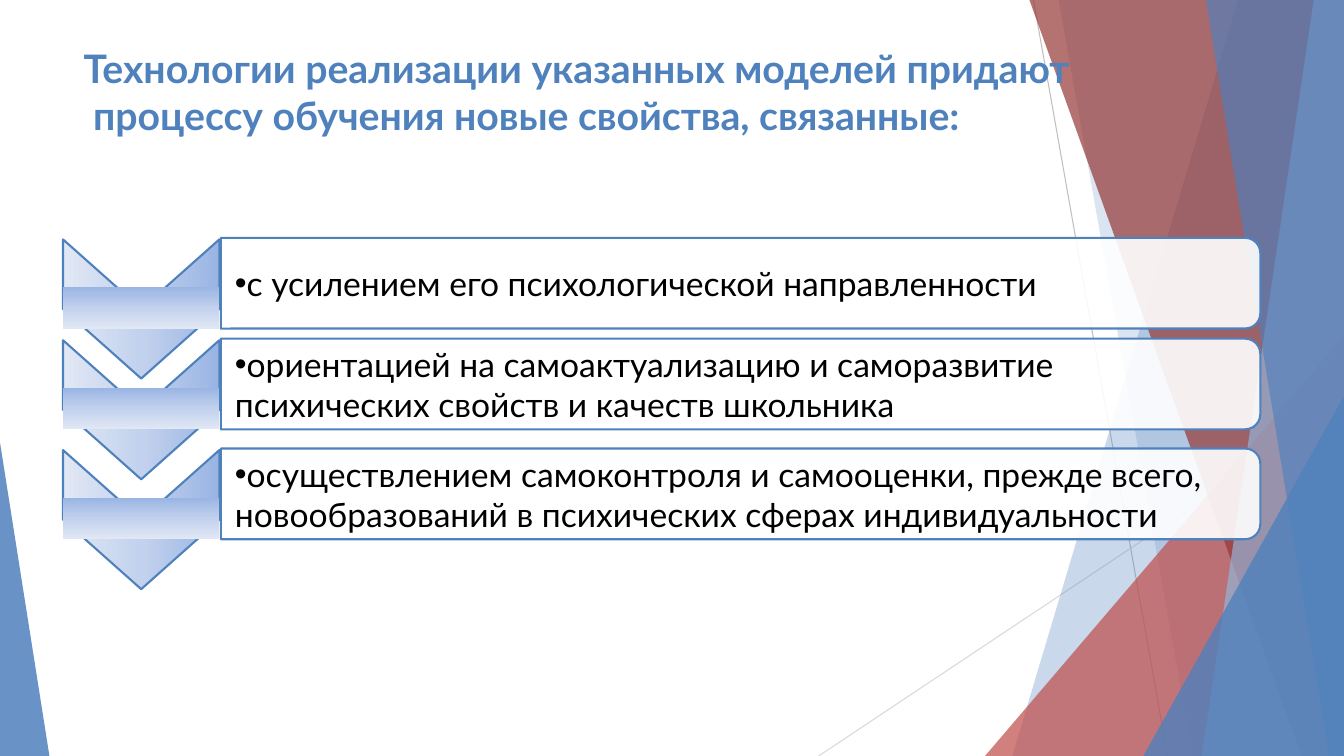
"""Build a slide with a title and three chevron rows over a faceted backdrop."""
import copy

import pptx
import pptx.dml.color
import pptx.enum.shapes
import pptx.enum.text
import pptx.oxml
import pptx.oxml.ns
import pptx.util

COLORS = {
    "blue": "4F81BD", "pale_blue": "95B3D7", "red": "C0504D", "dark_red": "953735",
    "white": "FFFFFF", "black": "000000", "gray": "BFBFBF", "light_gray": "D9D9D9",
    "chevron_dark": "9AB5E4", "chevron_mid": "C2D1ED", "chevron_light": "E1E8F5",
}
GRADIENT = {0: "chevron_dark", 0.5: "chevron_mid", 1: "chevron_light"}
COLUMNS, ROWS = 133.3, 75
CELL = pptx.util.Inches(0.1)
KIND = pptx.enum.shapes.MSO_SHAPE
ANCHOR = pptx.enum.text.MSO_ANCHOR

TITLE = "Технологии реализации указанных моделей придают\n процессу обучения новые свойства, связанные:"
PROPERTIES = {
    23.6: "с усилением его психологической направленности",
    33.6: "ориентацией на самоактуализацию и саморазвитие психических свойств и качеств школьника",
    44.5: "осуществлением самоконтроля и самооценки, прежде всего, "
          "новообразований в психических сферах индивидуальности",
}


def cells(count):
    return round(count * CELL)


def color(name):
    return pptx.dml.color.RGBColor.from_string(COLORS[name])


def tag(name):
    return pptx.oxml.ns.qn(name)


def write_text(box, text, size=24, shade="black", bold=False, anchor=ANCHOR.MIDDLE,
               insets=(1, 0.5, 1, 0.5), bullet=None, level=0):
    frame = box.text_frame
    frame.word_wrap = True
    frame.auto_size = pptx.enum.text.MSO_AUTO_SIZE.NONE
    frame.vertical_anchor = anchor
    frame.margin_left, frame.margin_top, frame.margin_right, frame.margin_bottom = map(cells, insets)
    para = frame.paragraphs[0]
    para.text = text
    para.level = level
    para.alignment = pptx.enum.text.PP_ALIGN.LEFT
    para.space_before = pptx.util.Pt(0)
    for span in para.runs:
        span.font.name = "Lato"
        span.font.size = pptx.util.Pt(size)
        span.font.bold = bold
        span.font.color.rgb = color(shade)
    for line_break in box.element.iter(tag("a:br")):
        line_break.append(copy.deepcopy(line_break.getprevious().find(tag("a:rPr"))))
    if bullet:
        settings = next(box.element.iter(tag("a:pPr")))
        settings.set("marL", "0")
        settings.set("indent", "0")
        mark = pptx.oxml.parse_xml(f'<a:buChar {pptx.oxml.ns.nsdecls("a")} char="{bullet}"/>')
        settings.append(mark)


class Painter:
    def __init__(self, page):
        self.page = page

    def dress(self, shape, fill, opacity=100, outline=None):
        shape.shadow.inherit = False
        shape.fill.solid()
        shape.fill.fore_color.rgb = color(fill)
        if opacity < 100:
            shade = shape.element.spPr.find(tag("a:solidFill"))[0]
            shade.append(pptx.oxml.parse_xml(
                f'<a:alpha {pptx.oxml.ns.nsdecls("a")} val="{opacity * 1000}"/>'))
        self.outline(shape, outline)

    def outline(self, shape, name):
        if name:
            shape.line.color.rgb = color(name)
            shape.line.width = pptx.util.Pt(1.5)
        else:
            shape.line.fill.background()

    def shape(self, kind, area, fill, opacity=100, outline=None, peak=None):
        shape = self.page.shapes.add_shape(kind, *map(cells, area))
        if peak is not None:
            shape.adjustments[0] = peak
        self.dress(shape, fill, opacity, outline)
        return shape

    def gradient(self, shape):
        shape.fill.gradient()
        shape.fill.gradient_angle = 270
        stops = next(shape.element.iter(tag("a:gsLst")))
        stops.insert(1, copy.deepcopy(stops[1]))
        for stop, (position, name) in zip(shape.fill.gradient_stops, GRADIENT.items()):
            stop.position = position
            stop.color.rgb = color(name)

    def facet(self, top, bottom, fill, opacity):
        outline = self.page.shapes.build_freeform(cells(top), 0)
        corners = [(COLUMNS, 0), (COLUMNS, ROWS), (bottom, ROWS)]
        outline.add_line_segments([(cells(x), cells(y)) for x, y in corners])
        self.dress(outline.convert_to_shape(), fill, opacity)

    def line(self, start, end, name):
        straight = pptx.enum.shapes.MSO_CONNECTOR.STRAIGHT
        line = self.page.shapes.add_connector(straight, *map(cells, start + end))
        line.line.color.rgb = color(name)
        line.line.width = pptx.util.Pt(0.75)
        line.element.spPr.append(
            pptx.oxml.parse_xml(f'<a:effectLst {pptx.oxml.ns.nsdecls("a")}/>'))

    def place(self, box, area):
        box.left, box.top, box.width, box.height = map(cells, area)
        box.element.getparent().append(box.element)

    def backdrop(self):
        self.line((102.5, 0), (115.8, ROWS), "gray")
        self.line((COLUMNS, 40.3), (81.2, ROWS), "light_gray")
        self.facet(122.8, 100.4, "blue", 30)
        self.facet(105, 118.3, "blue", 20)
        self.shape(KIND.ISOSCELES_TRIANGLE, (97.7, 33.3, 35.6, 41.7), "red", 72, peak=1)
        self.facet(102.1, 129.1, "dark_red", 70)
        self.facet(130.3, 119.2, "pale_blue", 70)
        self.facet(119.6, 131.8, "blue", 65)
        self.shape(KIND.ISOSCELES_TRIANGLE, (113.4, 39.3, 19.9, 35.7), "blue", 80, peak=1)
        self.shape(KIND.ISOSCELES_TRIANGLE, (0, 43.9, 4.9, 31.1), "blue", 85, peak=0)

    def title(self, text):
        box = self.page.shapes.title
        self.place(box, (7.3, 3.9, 120, 19.4))
        write_text(box, text, size=28, shade="blue", bold=True, anchor=ANCHOR.TOP)

    def property_row(self, box, top, text):
        chevron = self.shape(KIND.CHEVRON, (7.1, top - 0.7, 13.8, 15.5), "white", outline="blue")
        chevron.rotation = 90
        self.gradient(chevron)
        self.gradient(self.shape(KIND.RECTANGLE, (6.2, top + 4.9, 15.5, 4.1), "white"))
        card = self.shape(KIND.ROUND_2_SAME_RECTANGLE, (68.95, top - 47.05, 9, 103.1),
                          "white", 90, "blue")
        card.rotation = 90
        self.place(box, (21.9, top + 0.45, 102.2, 8.1))
        write_text(box, text, insets=(1.4, 0.1, 2, 0.1), bullet="•", level=1)


def main():
    deck = pptx.Presentation()
    deck.slide_width, deck.slide_height = cells(COLUMNS), cells(ROWS)
    page = deck.slides.add_slide(deck.slide_layouts.get_by_name("Comparison"))
    boxes = list(page.placeholders)[1:]
    painter = Painter(page)
    painter.backdrop()
    painter.title(TITLE)
    for box, (top, text) in zip(boxes, PROPERTIES.items()):
        painter.property_row(box, top, text)
    for box in boxes[len(PROPERTIES):]:
        box.element.getparent().remove(box.element)
    deck.save("out.pptx")


if __name__ == "__main__":
    main()
